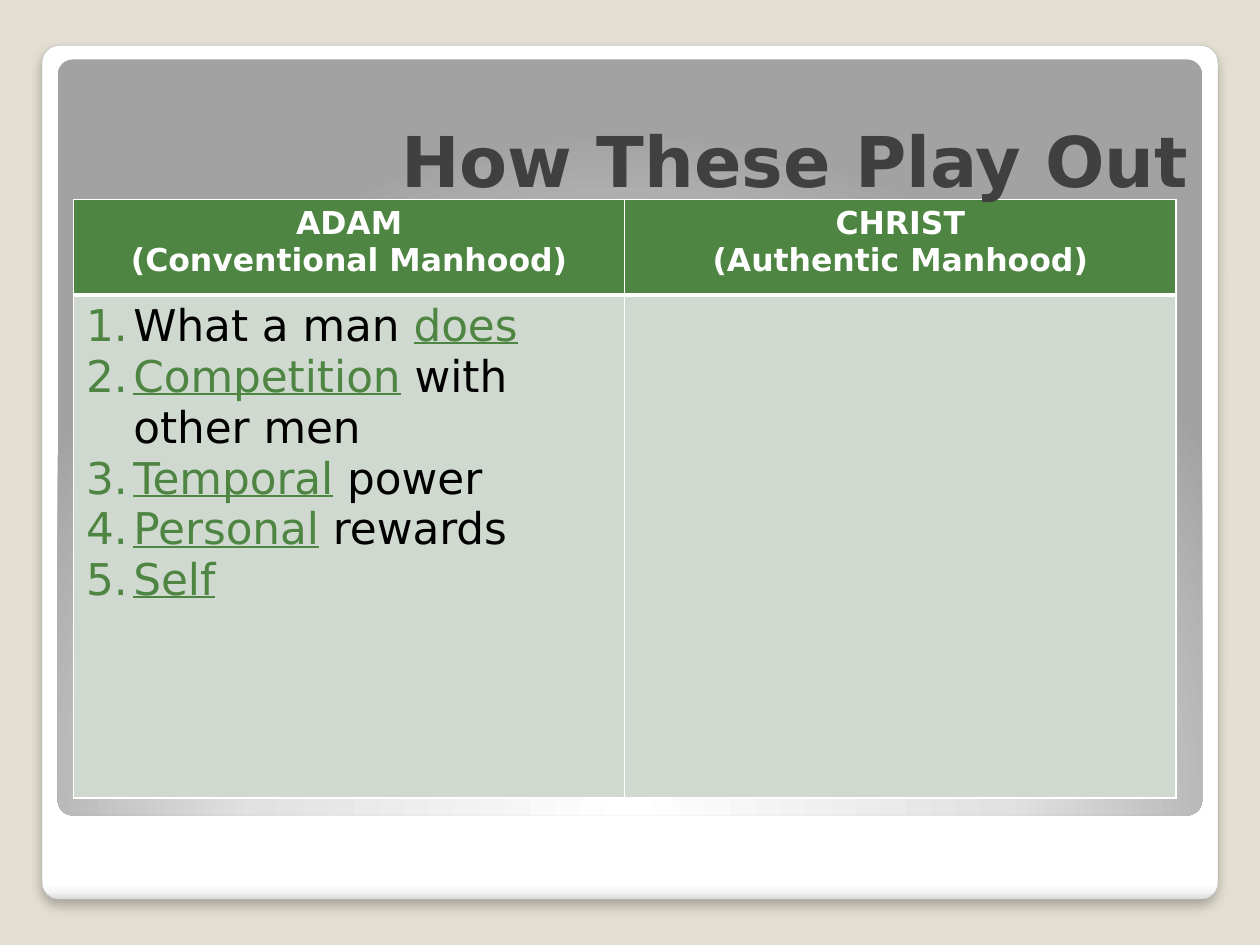
import pptx
import pptx.util
import pptx.dml.color
import pptx.enum.shapes
import pptx.enum.text
import pptx.oxml
import pptx.oxml.ns
from dataclasses import dataclass

Pt = pptx.util.Pt
Align = pptx.enum.text.PP_ALIGN
SPACE = pptx.oxml.ns.nsdecls("a")


@dataclass(frozen=True)
class Theme:
    font: str = "DejaVu Sans"
    back: str = "E3DED1"
    white: str = "FFFFFF"
    edge: str = "A4A4A4"
    dark: str = "404040"
    black: str = "000000"
    green: str = "4E8542"
    pale: str = "D0D9CF"
    title: int = 40
    body: int = 25
    head: int = 18


def tint(code):
    return pptx.dml.color.RGBColor.from_string(code)


def write(para, text, font, size, color, bold=False, under=False):
    """Add one run of text to a paragraph."""
    run = para.add_run()
    run.text = text
    run.font.name = font
    run.font.size = Pt(size)
    run.font.color.rgb = tint(color)
    run.font.bold = bold
    run.font.underline = under


def node(xml):
    """Make an element from markup, with the namespace added to its first tag."""
    tag = xml[1:].split(">")[0].split()[0]
    return pptx.oxml.parse_xml(xml.replace(tag, f"{tag} {SPACE}", 1))


class Deck:
    def __init__(self, theme):
        self.theme = theme
        self.show = pptx.Presentation()
        self.show.slide_width, self.show.slide_height = Pt(720), Pt(540)
        self.slide = self.show.slides.add_slide(self.show.slide_layouts[5])
        fill = self.slide.background.fill
        fill.solid()
        fill.fore_color.rgb = tint(theme.back)

    def panel(self, box, stops, shade, line=None, shadow=""):
        """Rounded panel with a gradient; shade is the markup for its direction."""
        shape = self.slide.shapes.add_shape(
            pptx.enum.shapes.MSO_SHAPE.ROUNDED_RECTANGLE, *map(Pt, box))
        shape.adjustments[0] = 0.02
        shape.shadow.inherit = False
        if line:
            shape.line.color.rgb = tint(line)
            shape.line.width = Pt(0.16)
        else:
            shape.line.fill.background()
        marks = "".join(f'<a:gs pos="{at * 1000}"><a:srgbClr val="{code}"/></a:gs>'
                        for at, code in stops)
        props = shape._element.spPr
        props.find(pptx.oxml.ns.qn("a:prstGeom")).addnext(node(
            f'<a:gradFill rotWithShape="1"><a:gsLst>{marks}</a:gsLst>{shade}</a:gradFill>'))
        if shadow:
            props.find(pptx.oxml.ns.qn("a:effectLst")).append(node(shadow))

    def title(self, text, box):
        shape = self.slide.shapes.title
        shape.left, shape.top, shape.width, shape.height = map(Pt, box)
        frame = shape.text_frame
        frame.word_wrap = True
        frame.auto_size = pptx.enum.text.MSO_AUTO_SIZE.NONE
        frame.vertical_anchor = pptx.enum.text.MSO_ANCHOR.BOTTOM
        para = frame.paragraphs[0]
        para.alignment = Align.RIGHT
        write(para, text, self.theme.font, self.theme.title, self.theme.dark, bold=True)
        # The title lies over the table
        self.slide.shapes._spTree.append(shape._element)

    def table(self, box, rows, heads, lists):
        grid = self.slide.shapes.add_table(2, len(heads), *map(Pt, box)).table
        grid.horz_banding = False
        for row, high in zip(grid.rows, rows):
            row.height = Pt(high)
        for col, (lines, items) in enumerate(zip(heads, lists)):
            top, low = grid.cell(0, col), grid.cell(1, col)
            self.paint(top, self.theme.green, dict(L=1, R=1, T=1, B=3))
            self.paint(low, self.theme.pale, dict(L=1, R=1, T=3, B=1))
            for para, text in self.paras(top, lines):
                para.alignment = Align.CENTER
                write(para, text, self.theme.font, self.theme.head,
                      self.theme.white, bold=True)
            for para, parts in self.paras(low, items):
                self.number(para)
                for text, key in parts:
                    write(para, text, self.theme.font, self.theme.body,
                          self.theme.green if key else self.theme.black, under=key)

    def paras(self, cell, items):
        frame = cell.text_frame
        for i, item in enumerate(items):
            yield (frame.add_paragraph() if i else frame.paragraphs[0]), item

    def paint(self, cell, color, sides):
        props = cell._tc.get_or_add_tcPr()
        for side, wide in sides.items():
            props.append(node(
                f'<a:ln{side} w="{Pt(wide)}"><a:solidFill><a:srgbClr '
                f'val="{self.theme.white}"/></a:solidFill></a:ln{side}>'))
        cell.fill.solid()
        cell.fill.fore_color.rgb = tint(color)

    def number(self, para):
        props = para._p.get_or_add_pPr()
        props.set("marL", str(Pt(27)))
        props.set("indent", str(-Pt(27)))
        props.append(node(f'<a:buClr><a:srgbClr val="{self.theme.green}"/></a:buClr>'))
        props.append(node('<a:buFont typeface="+mj-lt"/>'))
        props.append(node('<a:buAutoNum type="arabicPeriod"/>'))


def main():
    theme = Theme()
    deck = Deck(theme)

    # White card, then the grey panel lit from below
    deck.panel((24, 26, 672, 488),
               [(0, theme.white), (98, theme.white), (99, "F7F7F7"), (100, "DADADA")],
               '<a:lin ang="5400000" scaled="0"/>', line=theme.edge,
               shadow=f'<a:outerShdw blurRad="{Pt(6)}" dist="{Pt(4)}" dir="5400000" '
                      f'algn="tl" rotWithShape="0"><a:srgbClr val="{theme.black}">'
                      '<a:alpha val="25000"/></a:srgbClr></a:outerShdw>')
    deck.panel((33, 34, 654, 432),
               [(0, theme.white), (55, "E1E1E1"), (100, "A2A2A2")],
               '<a:path path="circle"><a:fillToRect l="50000" t="175000" '
               'r="50000" b="-75000"/></a:path>')

    # Comparison table; True marks a key word
    deck.table((42, 114, 630, 342), (54.5, 287.5),
               [("ADAM", "(Conventional Manhood)"), ("CHRIST", "(Authentic Manhood)")],
               [[[("What a man ", False), ("does", True)],
                 [("Competition", True), (" with other men", False)],
                 [("Temporal", True), (" power", False)],
                 [("Personal", True), (" rewards", False)],
                 [("Self", True)]],
                []])

    deck.title("How These Play Out", (42, 36, 644, 83))
    deck.show.save("out.pptx")


if __name__ == "__main__":
    main()
